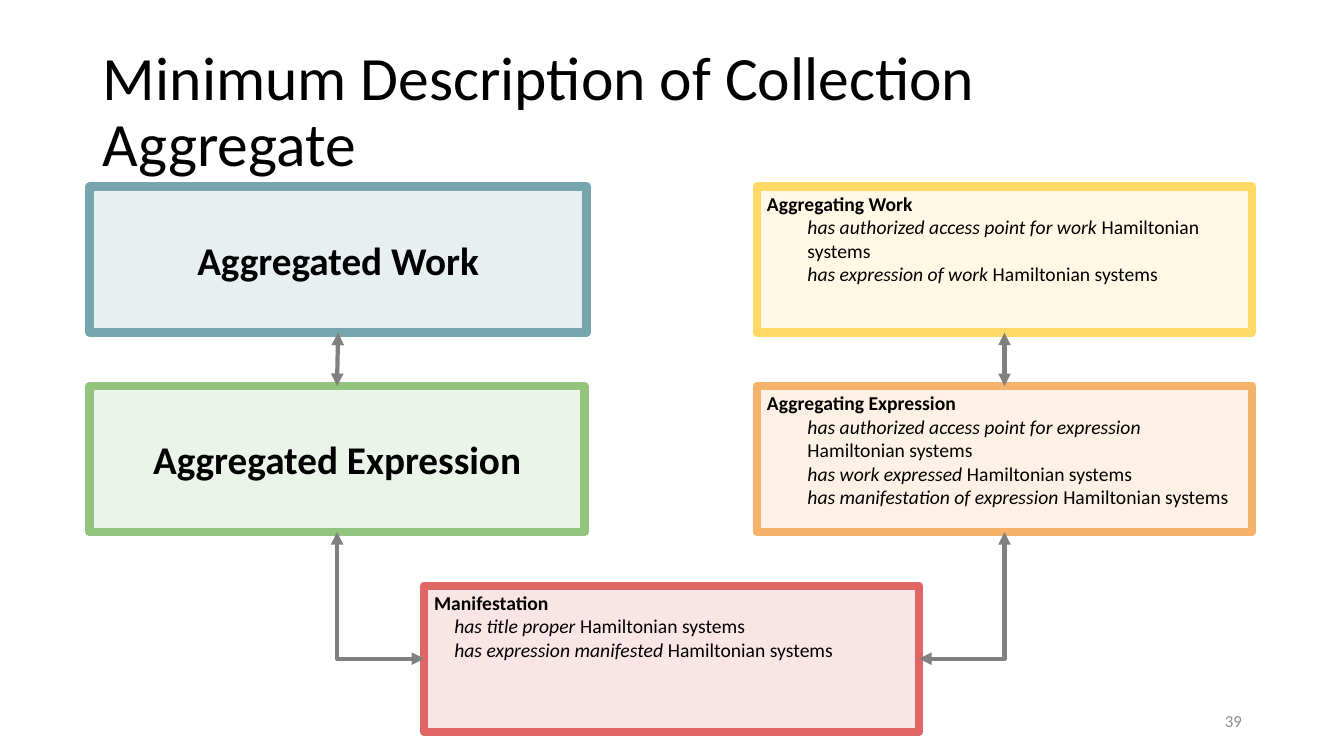
import pptx
import pptx.dml.color
import pptx.enum.shapes
import pptx.enum.text
import pptx.oxml
import pptx.oxml.ns
import pptx.util
import lxml.etree

Cm = pptx.util.Cm
Pt = pptx.util.Pt
RGBColor = pptx.dml.color.RGBColor
MSO_ANCHOR = pptx.enum.text.MSO_ANCHOR
PP_ALIGN = pptx.enum.text.PP_ALIGN
MSO_CONNECTOR = pptx.enum.shapes.MSO_CONNECTOR
qn = pptx.oxml.ns.qn

FONT = "Calibri"
BLACK = RGBColor(0x00, 0x00, 0x00)
NUMBER_GREY = RGBColor(0x8C, 0x8C, 0x8C)
ARROW_GREY = RGBColor(0x80, 0x80, 0x80)
TEAL, PALE_TEAL = RGBColor(0x76, 0xA5, 0xAF), RGBColor(0xD0, 0xE0, 0xE3)
YELLOW, PALE_YELLOW = RGBColor(0xFF, 0xD9, 0x66), RGBColor(0xFF, 0xF2, 0xCC)
GREEN, PALE_GREEN = RGBColor(0x93, 0xC4, 0x7D), RGBColor(0xD9, 0xEA, 0xD3)
ORANGE, PALE_ORANGE = RGBColor(0xF6, 0xB2, 0x6B), RGBColor(0xFC, 0xE5, 0xCD)
RED, PALE_RED = RGBColor(0xE0, 0x66, 0x66), RGBColor(0xF4, 0xCC, 0xCC)

LEFT, MIDDLE, RIGHT = 2.26, 10.69, 19.08
WORK_TOP, ROW_PITCH = 4.7, 5.03
EXPRESSION_TOP = WORK_TOP + ROW_PITCH
MANIFESTATION_TOP = EXPRESSION_TOP + ROW_PITCH
ENTITY_WIDTH, ENTITY_HEIGHT = 12.47, 3.68
TOP_SIDE, LEFT_SIDE, BOTTOM_SIDE, RIGHT_SIDE = range(4)
COLLECTION = "Hamiltonian systems"


def add_run(paragraph, text, size, color=BLACK, bold=False, italic=False):
    run = paragraph.add_run()
    run.text = text
    run.font.name = FONT
    run.font.size = Pt(size)
    run.font.color.rgb = color
    run.font.bold = bold
    run.font.italic = italic


def add_title(slide, left, top, width, height):
    title = slide.shapes.title
    title.left, title.top, title.width, title.height = Cm(left), Cm(top), Cm(width), Cm(height)
    frame = title.text_frame
    frame.word_wrap = True
    frame.auto_size = pptx.enum.text.MSO_AUTO_SIZE.NONE
    frame.vertical_anchor = MSO_ANCHOR.MIDDLE
    heading = frame.paragraphs[0]
    heading.alignment = PP_ALIGN.LEFT
    heading.line_spacing = 0.9
    add_run(heading, "Minimum Description of Collection Aggregate", 44)


def add_slide_number(slide, left, top, width, height):
    frame = slide.shapes.add_textbox(Cm(left), Cm(top), Cm(width), Cm(height)).text_frame
    frame.word_wrap = True
    frame.vertical_anchor = MSO_ANCHOR.MIDDLE
    number = frame.paragraphs[0]
    number.alignment = PP_ALIGN.RIGHT
    add_run(number, "39", 12, NUMBER_GREY)


def add_entity(slide, left, top, border, fill, width=ENTITY_WIDTH):
    entity = slide.shapes.add_shape(
        pptx.enum.shapes.MSO_SHAPE.RECTANGLE, Cm(left), Cm(top), Cm(width), Cm(ENTITY_HEIGHT))
    entity.shadow.inherit = False
    entity.fill.solid()
    entity.fill.fore_color.rgb = fill
    fill_color = entity.fill._xPr.find(qn("a:solidFill"))[0]
    lxml.etree.SubElement(fill_color, qn("a:alpha"), val="50000")
    entity.line.color.rgb = border
    entity.line.width = Pt(6)
    entity.text_frame.word_wrap = True
    return entity


def add_named_entity(slide, left, top, border, fill, name, width=ENTITY_WIDTH):
    entity = add_entity(slide, left, top, border, fill, width)
    entity.text_frame.vertical_anchor = MSO_ANCHOR.MIDDLE
    label = entity.text_frame.paragraphs[0]
    label.alignment = PP_ALIGN.CENTER
    add_run(label, name, 28, bold=True)
    return entity


def add_described_entity(slide, left, top, border, fill, name, relations, indent):
    entity = add_entity(slide, left, top, border, fill)
    frame = entity.text_frame
    frame.vertical_anchor = MSO_ANCHOR.TOP
    label = frame.paragraphs[0]
    label.alignment = PP_ALIGN.LEFT
    add_run(label, name, 14, bold=True)
    for relation in relations:
        statement = frame.add_paragraph()
        statement.alignment = PP_ALIGN.LEFT
        properties = statement._p.get_or_add_pPr()
        properties.set("marL", str(Cm(indent)))
        properties.set("indent", "0")
        add_run(statement, relation + " ", 14, italic=True)
        add_run(statement, COLLECTION, 14)
    return entity


def add_relationship(slide, start, start_side, end, end_side, kind=MSO_CONNECTOR.STRAIGHT):
    arrow = slide.shapes.add_connector(kind, 0, 0, 0, 0)
    arrow.begin_connect(start, start_side)
    arrow.end_connect(end, end_side)
    arrow.line.color.rgb = ARROW_GREY
    arrow.line.width = Pt(3)
    properties = arrow._element.spPr
    if kind == MSO_CONNECTOR.ELBOW:
        properties.find(qn("a:prstGeom")).set("prst", "bentConnector2")
    outline = properties.find(qn("a:ln"))
    for arrowhead in ("a:headEnd", "a:tailEnd"):
        lxml.etree.SubElement(outline, qn(arrowhead), type="triangle")
    lxml.etree.SubElement(properties, qn("a:effectLst"))


def add_diagram(slide):
    aggregated_work = add_named_entity(
        slide, LEFT, WORK_TOP, TEAL, PALE_TEAL, "Aggregated Work", 12.52)
    aggregating_work = add_described_entity(
        slide, RIGHT, WORK_TOP, YELLOW, PALE_YELLOW, "Aggregating Work",
        ["has authorized access point for work", "has expression of work"], 1.02)
    aggregated_expression = add_named_entity(
        slide, LEFT, EXPRESSION_TOP, GREEN, PALE_GREEN, "Aggregated Expression")
    aggregating_expression = add_described_entity(
        slide, RIGHT, EXPRESSION_TOP, ORANGE, PALE_ORANGE, "Aggregating Expression",
        ["has authorized access point for expression", "has work expressed",
         "has manifestation of expression"], 1.02)
    manifestation = add_described_entity(
        slide, MIDDLE, MANIFESTATION_TOP, RED, PALE_RED, "Manifestation",
        ["has title proper", "has expression manifested"], 0.51)
    for work, expression, side in (
            (aggregated_work, aggregated_expression, LEFT_SIDE),
            (aggregating_work, aggregating_expression, RIGHT_SIDE)):
        add_relationship(slide, manifestation, side, expression, BOTTOM_SIDE, MSO_CONNECTOR.ELBOW)
        add_relationship(slide, work, BOTTOM_SIDE, expression, TOP_SIDE)


def main():
    presentation = pptx.Presentation()
    presentation.slide_width, presentation.slide_height = Cm(33.87), Cm(19.05)
    slide = presentation.slides.add_slide(presentation.slide_layouts[5])
    add_title(slide, 2.34, 1.02, 29.21, 3.68)
    add_slide_number(slide, 23.93, 17.65, 7.62, 1.02)
    add_diagram(slide)
    presentation.save("out.pptx")


if __name__ == "__main__":
    main()
